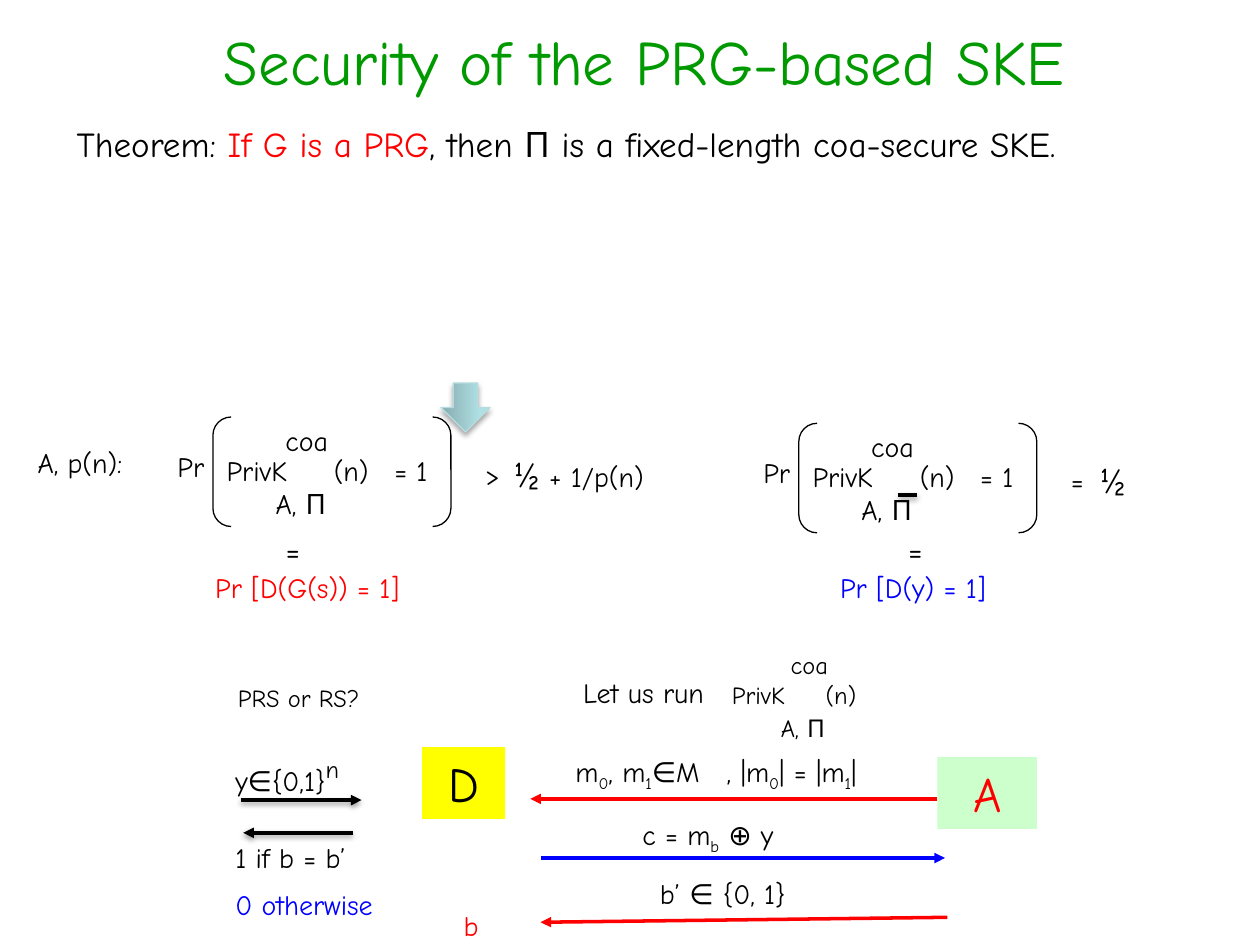
from dataclasses import dataclass

from lxml import etree
from pptx import Presentation
from pptx.dml.color import RGBColor
from pptx.enum.shapes import MSO_CONNECTOR, MSO_SHAPE
from pptx.enum.text import MSO_ANCHOR, PP_ALIGN
from pptx.oxml.ns import qn
from pptx.util import Pt

STRAIGHT = MSO_CONNECTOR.STRAIGHT
RECTANGLE = MSO_SHAPE.RECTANGLE
BRACKETS = MSO_SHAPE.DOUBLE_BRACKET
DOWN_ARROW = MSO_SHAPE.DOWN_ARROW
LEFT, CENTER = PP_ALIGN.LEFT, PP_ALIGN.CENTER
TOP, MIDDLE = MSO_ANCHOR.TOP, MSO_ANCHOR.MIDDLE


@dataclass(frozen=True)
class Theme:
    font: str = "Comic Neue"
    black: str = "000000"
    red: str = "FF0000"
    blue: str = "0000FF"
    green: str = "009900"
    yellow: str = "FFFF00"
    mint: str = "CCFFCC"
    teal_dark: str = "87ABAE"
    teal_light: str = "AFE0E4"
    teal_line: str = "B6DCDF"
    title: int = 36
    party: int = 28
    power: int = 24
    statement: int = 20
    equality: int = 18
    body: int = 16
    small: int = 14


THEME = Theme()
SUBSCRIPT, SUPERSCRIPT = -25, 30


def set_attributes(target, values):
    for name, value in values.items():
        setattr(target, name, value)


def add_run(paragraph, text, size, color, baseline=0):
    run = paragraph.add_run()
    set_attributes(run, {"text": text})
    set_attributes(run.font, {"name": THEME.font, "size": Pt(size)})
    run.font.color.rgb = RGBColor.from_string(color)
    if baseline:
        run._r.get_or_add_rPr().set("baseline", str(baseline * 1000))


def add_tab_stop(paragraph, position):
    tabs = etree.SubElement(paragraph._p.get_or_add_pPr(), qn("a:tabLst"))
    etree.SubElement(tabs, qn("a:tab"), pos=str(Pt(position)), algn="l")


def write(shape, paragraphs, size, color, align=LEFT, anchor=TOP, tab=None):
    frame = shape.text_frame
    set_attributes(frame, {"word_wrap": True, "vertical_anchor": anchor})
    for index, runs in enumerate(paragraphs):
        paragraph = frame.add_paragraph() if index else frame.paragraphs[0]
        paragraph.alignment = align
        if index:
            paragraph.space_before = Pt(size / 2)
        if tab:
            add_tab_stop(paragraph, tab)
        for text, changes in runs:
            add_run(paragraph, text, **{"size": size, "color": color, **changes})


def add_text(slide, box, content, size=THEME.body, color=THEME.black, **layout):
    paragraphs = [[(content, {})]] if isinstance(content, str) else content
    shape = slide.shapes.add_textbox(*map(Pt, box))
    write(shape, paragraphs, size, color, **layout)


def add_shadow(effects, opacity, distance):
    shadow = etree.SubElement(effects, qn("a:outerShdw"), blurRad=str(Pt(3.1)),
                              dist=str(Pt(distance)), dir="5400000", rotWithShape="0")
    color = etree.SubElement(shadow, qn("a:srgbClr"), val=THEME.black)
    etree.SubElement(color, qn("a:alpha"), val=str(opacity * 1000))


def add_line(slide, start, end, color, arrow=True, shadow=False):
    line = slide.shapes.add_connector(STRAIGHT, *map(Pt, (*start, *end)))
    line.line.width = Pt(2)
    line.line.color.rgb = RGBColor.from_string(color)
    properties = line._element.spPr
    if arrow:
        etree.SubElement(properties.find(qn("a:ln")), qn("a:tailEnd"), type="triangle")
    effects = etree.SubElement(properties, qn("a:effectLst"))
    if shadow:
        add_shadow(effects, 38, 1.6)


def add_shape(slide, kind, box):
    shape = slide.shapes.add_shape(kind, *map(Pt, box))
    shape.shadow.inherit = False
    return shape


def add_party(slide, box, name, fill, color):
    shape = add_shape(slide, RECTANGLE, box)
    shape.fill.solid()
    shape.fill.fore_color.rgb = RGBColor.from_string(fill)
    shape.line.fill.background()
    write(shape, [[(name, {})]], THEME.party, color, align=CENTER, anchor=MIDDLE)


def add_down_arrow(slide, box):
    shape = add_shape(slide, DOWN_ARROW, box)
    shape.fill.gradient()
    shape.fill.gradient_angle = 0
    stops = zip(shape.fill.gradient_stops, (THEME.teal_dark, THEME.teal_light), (0, 0.8))
    for stop, color, position in stops:
        stop.color.rgb = RGBColor.from_string(color)
        stop.position = position
    shape.line.width = Pt(0.75)
    shape.line.color.rgb = RGBColor.from_string(THEME.teal_line)
    add_shadow(shape._element.spPr.find(qn("a:effectLst")), 35, 1.8)


def add_game(slide, left, top, size):
    add_text(slide, (left, top, 118, 26.6), "PrivK\t(n)", size, tab=3.83 * size)
    add_text(slide, (left + 28, top + 18.7, 50.4, 26.6), "A, Π", size)
    add_text(slide, (left + 33.6, top - 17.3, 79.2, 26.6), "coa", size)


def add_probability(slide, left, top, relation, value):
    brackets = add_shape(slide, BRACKETS, (left, top, 136, 62.6))
    brackets.fill.background()
    brackets.line.width = Pt(0.75)
    brackets.line.color.rgb = RGBColor.from_string(THEME.black)
    add_game(slide, left + 0.7, top + 17.3, THEME.body)
    for text, across, down in (("Pr", -27.4, 15.1), ("= 1", 96.5, 17.3),
                               (relation, 148.3, 19.4)):
        add_text(slide, (left + across, top + down, 44.6, 26.6), text)
    add_text(slide, (left + 164.9, top + 16.6, 124.6, 60.5), [value])


def add_statement(slide):
    add_text(slide, (25.2, 9.4, 686.2, 45.4), "Security of the PRG-based SKE",
             THEME.title, THEME.green, align=CENTER)
    add_text(slide, (36.7, 66.2, 640.8, 31.7),
             [[("Theorem: ", {}), ("If G is a PRG", {"color": THEME.red}),
               (", then Π is a fixed-length coa-secure SKE.", {})]], THEME.statement)


def add_probabilities(slide):
    add_down_arrow(slide, (252, 218.9, 28, 28))
    add_text(slide, (14.4, 251.3, 100, 26.6), "A, p(n):")
    half = ("½", {"size": THEME.statement})
    add_probability(slide, 121.7, 238.3, ">", [half, (" + 1/p(n)", {})])
    add_probability(slide, 456.5, 241.9, "=", [half])
    add_line(slide, (513.4, 283), (524.2, 283), THEME.black, arrow=False, shadow=True)
    for left, equal_left, text, color in (
            (115.9, 156.2, "Pr [D(G(s)) = 1]", THEME.red),
            (473, 511.9, "Pr [D(y) = 1]", THEME.blue)):
        add_text(slide, (equal_left, 300, 25.2, 28.8), "=", THEME.equality)
        add_text(slide, (left, 322.6, 130, 26.6), text, color=color)


def add_reduction(slide):
    add_party(slide, (535.7, 432.7, 56.9, 41), "A", THEME.mint, THEME.red)
    add_party(slide, (241.2, 427, 47.5, 41), "D", THEME.yellow, THEME.black)
    add_text(slide, (128.9, 386.6, 91.4, 24.5), "PRS or RS?", THEME.small)
    add_text(slide, (326.2, 382.3, 100, 26.6), "Let us run")
    add_game(slide, 411.1, 385.2, THEME.small)

    add_text(slide, (127.4, 424.8, 95.8, 26.6),
             [[("y∈{0,1}", {}),
               ("n", {"size": THEME.power, "baseline": SUPERSCRIPT})]])
    add_text(slide, (127.4, 476.6, 109.4, 55.4),
             [[("1 if b = b’", {})], [("0 otherwise", {"color": THEME.blue})]])
    add_text(slide, (257.8, 515.5, 28, 26.6), "b", color=THEME.red)

    low = {"baseline": SUBSCRIPT}
    add_text(slide, (321.8, 427.7, 213.1, 26.6),
             [[("m", {}), ("0", low), (", m", {}), ("1", low), ("∈M\t, |m", {}),
               ("0", low), ("| = |m", {}), ("1", low), ("|", {})]], tab=86.4)
    add_text(slide, (360, 463.7, 160.6, 26.6),
             [[("c = m", {}), ("b", low), (" ⊕ y", {})]])
    add_text(slide, (370, 497.5, 160.6, 26.6), "b’ ∈ {0, 1}")

    for start, end, color, shadow in (
            ((137.5, 457.2), (206.6, 457.2), THEME.black, True),
            ((201.6, 475.9), (139, 475.9), THEME.black, True),
            ((535.7, 456.5), (303.1, 456.5), THEME.red, False),
            ((308.9, 490.3), (540, 490.3), THEME.blue, False),
            ((541.4, 524.2), (308.9, 527), THEME.red, False)):
        add_line(slide, start, end, color, shadow=shadow)


def main():
    presentation = Presentation()
    set_attributes(presentation, {"slide_width": Pt(720), "slide_height": Pt(540)})
    slide = presentation.slides.add_slide(presentation.slide_layouts[6])
    add_statement(slide)
    add_probabilities(slide)
    add_reduction(slide)
    presentation.save("out.pptx")


if __name__ == "__main__":
    main()
